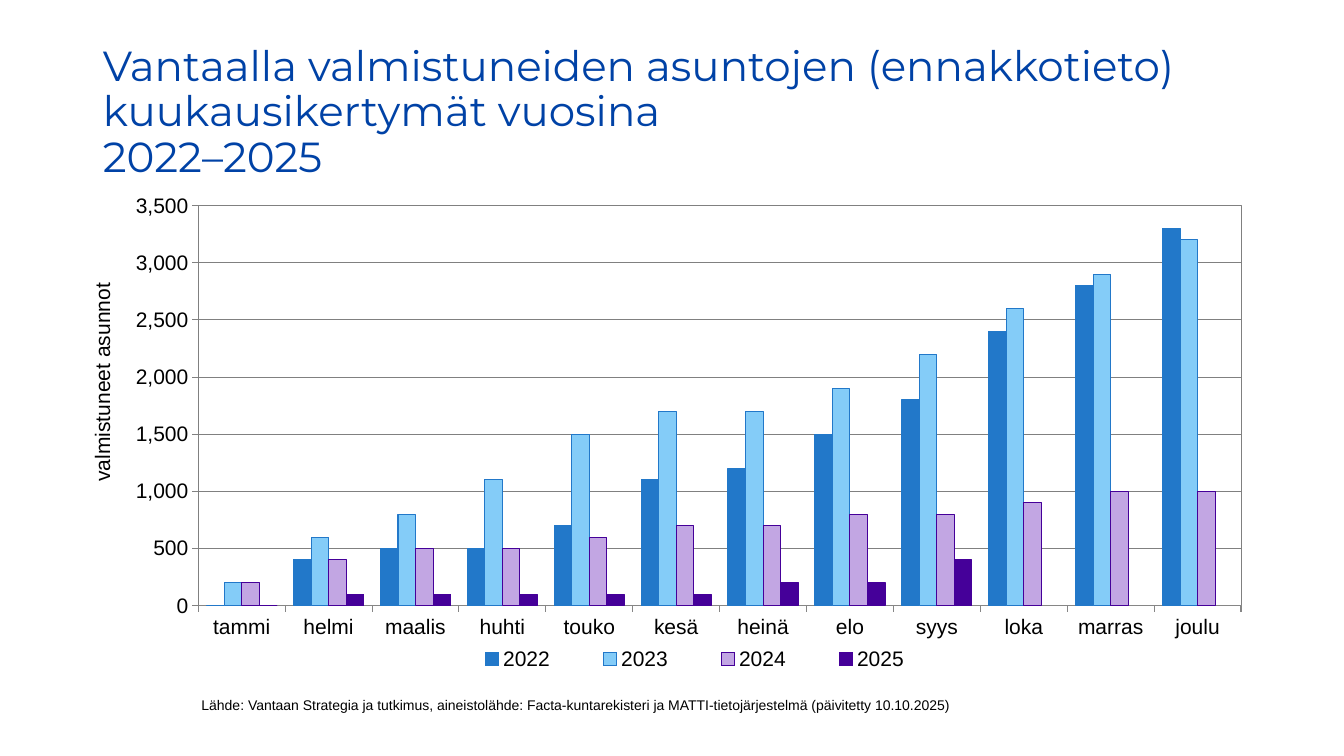
from dataclasses import dataclass

from pptx import Presentation
from pptx import util as u
from pptx.chart.data import CategoryChartData
from pptx.dml.color import RGBColor
from pptx.enum import chart as charts, text
from pptx.oxml import parse_xml
from pptx.oxml.ns import nsdecls, qn

TITLE = ("Vantaalla valmistuneiden asuntojen (ennakkotieto) "
         "kuukausikertymät vuosina \v2022–2025")
SOURCE = ("Lähde: Vantaan Strategia ja tutkimus, aineistolähde: Facta-kuntarekisteri "
          "ja MATTI-tietojärjestelmä (päivitetty 10.10.2025)")
VALUE_TITLE = "valmistuneet asunnot"
MONTHS = ["tammi", "helmi", "maalis", "huhti", "touko", "kesä",
          "heinä", "elo", "syys", "loka", "marras", "joulu"]
YEARS = {
    "2022": [0, 400, 500, 500, 700, 1100, 1200, 1500, 1800, 2400, 2800, 3300],
    "2023": [200, 600, 800, 1100, 1500, 1700, 1700, 1900, 2200, 2600, 2900, 3200],
    "2024": [200, 400, 500, 500, 600, 700, 700, 800, 800, 900, 1000, 1000],
    "2025": [0, 100, 100, 100, 100, 100, 200, 200, 400, None, None, None],
}


@dataclass
class Theme:
    title_font: str = "Montserrat"
    body_font: str = "Arial"
    title_size: int = 30
    chart_size: int = 15
    source_size: int = 10
    title: str = "0042A6"
    ink: str = "000000"
    category_line: str = "868686"
    grid: str = "808080"
    fills: tuple = ("2278C9", "84CCF8", "C2A6E3", "450099")
    outlines: tuple = ("2278C9", "2278C9", "450099", "450099")


theme = Theme()


def style_font(font, name, size, color):
    font.name = name
    font.size = u.Pt(size)
    font.bold = False
    font.color.rgb = RGBColor.from_string(color)


def write(box, words, font, size, color, spacing=1.0, anchor=text.MSO_ANCHOR.TOP):
    frame = box.text_frame
    frame.word_wrap = True
    frame.auto_size = text.MSO_AUTO_SIZE.NONE
    frame.vertical_anchor = anchor
    para = frame.paragraphs[0]
    para.text = words
    para.alignment = text.PP_ALIGN.LEFT
    para.line_spacing = spacing
    for span in para.runs:
        style_font(span.font, font, size, color)


def draw_line(line, color):
    line.color.rgb = RGBColor.from_string(color)
    line.width = u.Pt(0.75)


def place(parent, after=None, inner=False, **sides):
    for old in parent.findall(qn("c:layout")):
        parent.remove(old)
    target = '<c:layoutTarget val="inner"/>' if inner else ""
    modes = "".join(f'<c:{side}Mode val="edge"/>' for side in "xy")
    values = "".join(f'<c:{side} val="{value}"/>' for side, value in sides.items())
    layout = parse_xml(f'<c:layout {nsdecls("c")}><c:manualLayout>{target}{modes}{values}'
                       '</c:manualLayout></c:layout>')
    if after:
        parent.find(qn(after)).addnext(layout)
    else:
        parent.insert(0, layout)


def add_year_chart(page):
    data = CategoryChartData(number_format="General")
    data.categories = MONTHS
    for year, values in YEARS.items():
        data.add_series(year, values)
    chart = page.shapes.add_chart(
        charts.XL_CHART_TYPE.COLUMN_CLUSTERED, u.Inches(0.82), u.Inches(1.85),
        u.Inches(11.7), u.Inches(4.9), data).chart
    chart.has_title = False
    style_font(chart.font, theme.body_font, theme.chart_size, theme.ink)

    plot = chart.plots[0]
    plot.gap_width = 96
    plot.overlap = 0
    plot.vary_by_categories = False
    for series, fill, outline in zip(plot.series, theme.fills, theme.outlines):
        series.invert_if_negative = False
        series.format.fill.solid()
        series.format.fill.fore_color.rgb = RGBColor.from_string(fill)
        draw_line(series.format.line, outline)

    months, counts = chart.category_axis, chart.value_axis
    for axis, color in ((months, theme.category_line), (counts, theme.grid)):
        axis.major_tick_mark = charts.XL_TICK_MARK.OUTSIDE
        axis.minor_tick_mark = charts.XL_TICK_MARK.NONE
        draw_line(axis.format.line, color)
    counts.minimum_scale = 0
    counts.maximum_scale = 3500
    counts.major_unit = 500
    counts.has_major_gridlines = True
    draw_line(counts.major_gridlines.format.line, theme.grid)
    counts.tick_labels.number_format = "#,##0"
    counts.tick_labels.number_format_is_linked = False
    para = counts.axis_title.text_frame.paragraphs[0]
    para.text = VALUE_TITLE
    style_font(para.runs[0].font, theme.body_font, theme.chart_size, theme.ink)

    chart.has_legend = True
    chart.legend.position = charts.XL_LEGEND_POSITION.BOTTOM
    chart.legend.include_in_layout = False

    area = chart._chartSpace.chart.plotArea
    place(area, inner=True, x=0.098, y=0.039, w=0.884, h=0.81)
    place(counts.axis_title._element, after="c:tx", x=0.002, y=0.188)
    place(chart.legend._element, after="c:legendPos", x=0.302, y=0.922, w=0.434, h=0.07)
    area.append(parse_xml(
        f'<c:spPr {nsdecls("c", "a")}><a:noFill/><a:ln w="9525"><a:solidFill>'
        f'<a:srgbClr val="{theme.grid}"/></a:solidFill></a:ln></c:spPr>'))


def main():
    deck = Presentation()
    deck.slide_width, deck.slide_height = u.Inches(13.33), u.Inches(7.5)
    page = deck.slides.add_slide(deck.slide_layouts[5])
    title = page.shapes.title
    title.left, title.top = u.Inches(0.92), u.Inches(0.4)
    title.width, title.height = u.Inches(11.5), u.Inches(1.45)
    write(title, TITLE, theme.title_font, theme.title_size, theme.title,
          spacing=0.9, anchor=text.MSO_ANCHOR.MIDDLE)
    add_year_chart(page)
    source = page.shapes.add_textbox(
        u.Inches(1.9), u.Inches(6.86), u.Inches(9.16), u.Inches(0.4))
    write(source, SOURCE, theme.body_font, theme.source_size, theme.ink)
    deck.save("out.pptx")


if __name__ == "__main__":
    main()
